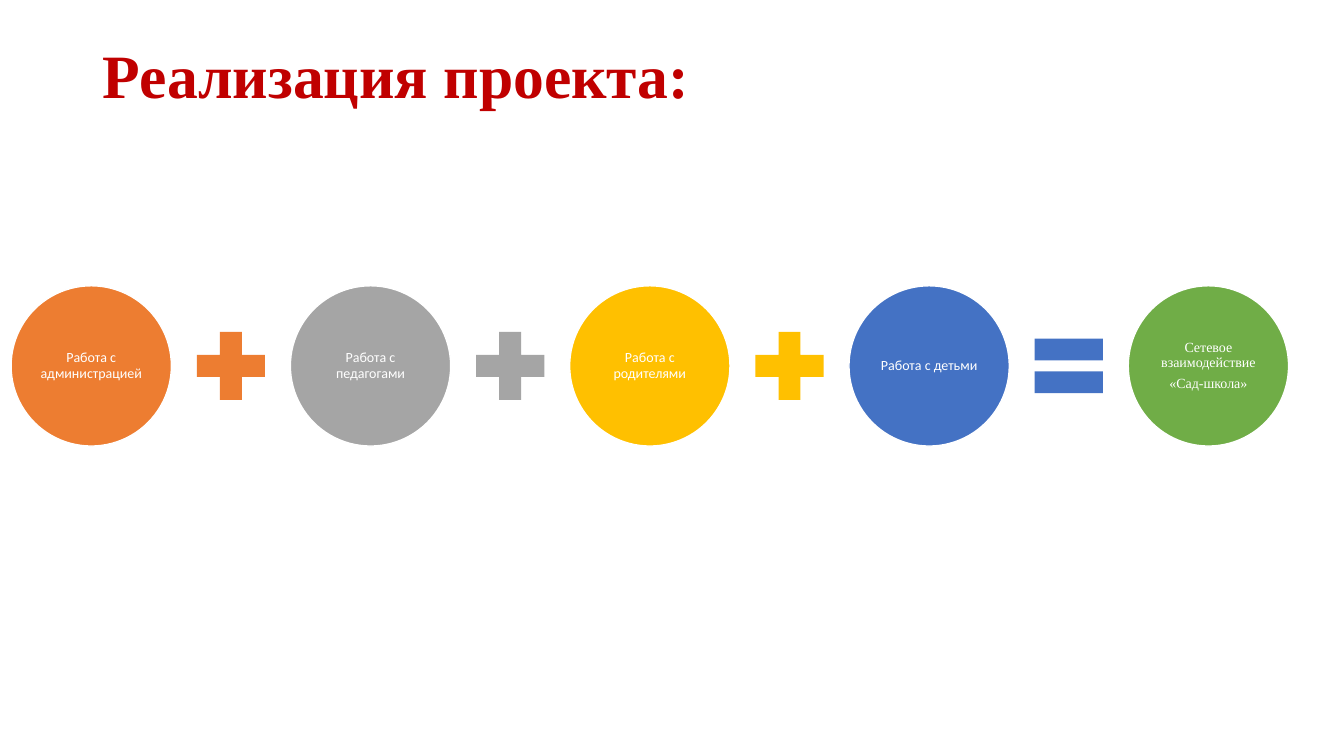
from pptx import Presentation
from pptx.dml.color import RGBColor
from pptx.enum.shapes import MSO_SHAPE as Shape
from pptx.enum.text import MSO_ANCHOR as Anchor, PP_ALIGN as Align
from pptx.util import Inches, Pt

COLORS = {
    "title": "C00000",
    "white": "FFFFFF",
    "orange": "ED7D31",
    "gray": "A5A5A5",
    "gold": "FFC000",
    "blue": "4472C4",
    "green": "70AD47",
}
SANS = "Calibri"
SERIF = "Times New Roman"
STEPS = [
    ("orange", SANS, ["Работа с администрацией"], Shape.MATH_PLUS),
    ("gray", SANS, ["Работа с педагогами"], Shape.MATH_PLUS),
    ("gold", SANS, ["Работа с родителями"], Shape.MATH_PLUS),
    ("blue", SANS, ["Работа с детьми"], Shape.MATH_EQUAL),
    ("green", SERIF, ["Сетевое взаимодействие", "«Сад-школа»"], None),
]
LEFT, PITCH, MIDDLE = 0.11, 2.77, 3.63
DISC, SIGN, SHIFT = 1.59, 0.92, 1.72


def color(name):
    return RGBColor.from_string(COLORS[name])


def add_run(para, text, face, size, tint, bold=False):
    para.line_spacing = 0.9
    run = para.add_run()
    run.text = text
    font = run.font
    font.name, font.size, font.bold = face, Pt(size), bold
    font.color.rgb = color(tint)


def add_title(slide):
    title = slide.shapes.title
    title.left, title.top = Inches(0.92), Inches(0.4)
    title.width, title.height = Inches(11.5), Inches(1.45)
    frame = title.text_frame
    frame.vertical_anchor = Anchor.TOP
    para = frame.paragraphs[0]
    para.alignment = Align.LEFT
    add_run(para, "Реализация проекта:", SERIF, 44, "title", True)


def add_mark(group, kind, left, size, tint):
    mark = group.shapes.add_shape(
        kind, Inches(left), Inches(MIDDLE - size / 2), Inches(size), Inches(size))
    mark.shadow.inherit = False
    mark.fill.solid()
    mark.fill.fore_color.rgb = color(tint)
    mark.line.fill.background()
    return mark


def add_disc(group, left, tint, face, lines):
    disc = add_mark(group, Shape.OVAL, left, DISC, tint)
    disc.line.color.rgb = color("white")
    disc.line.width = Pt(1)
    frame = disc.text_frame
    frame.word_wrap = True
    frame.vertical_anchor = Anchor.MIDDLE
    frame.margin_left = frame.margin_right = Inches(0.01)
    frame.margin_top = frame.margin_bottom = Inches(0.01)
    for i, line in enumerate(lines):
        para = frame.add_paragraph() if i else frame.paragraphs[0]
        para.alignment = Align.CENTER
        para.space_after = Pt(3.5)
        add_run(para, line, face, 10, "white")


def main():
    deck = Presentation()
    deck.slide_width, deck.slide_height = Inches(13.33), Inches(7.5)
    slide = deck.slides.add_slide(deck.slide_layouts[5])
    add_title(slide)
    group = slide.shapes.add_group_shape()
    for i, (tint, face, lines, sign) in enumerate(STEPS):
        left = LEFT + i * PITCH
        add_disc(group, left, tint, face, lines)
        if sign is not None:
            add_mark(group, sign, left + SHIFT, SIGN, tint)
    deck.save("out.pptx")


if __name__ == "__main__":
    main()
